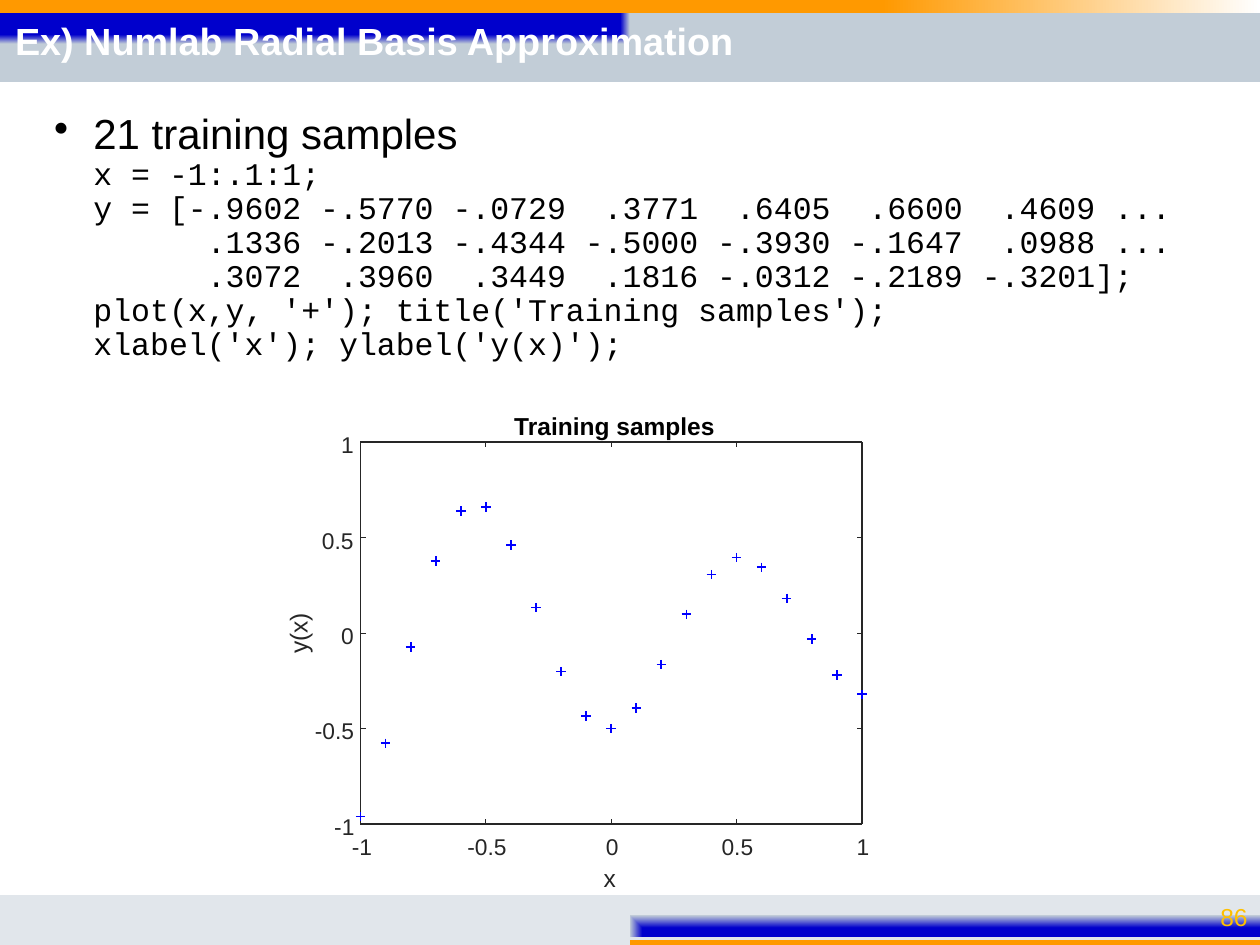
import pptx
import pptx.dml.color
import pptx.enum.shapes
import pptx.enum.text
import pptx.oxml
import pptx.oxml.ns
import pptx.util

Pt = pptx.util.Pt
qn = pptx.oxml.ns.qn
Align = pptx.enum.text.PP_ALIGN
Anchor = pptx.enum.text.MSO_ANCHOR
Fit = pptx.enum.text.MSO_AUTO_SIZE

theme = {
    "blue": "0000CC", "steel": "C2CDD7", "pale": "E1E6EB", "orange": "FF9900",
    "white": "FFFFFF", "black": "000000", "gold": "FFC000", "axis": "262626",
    "mark": "0000FF", "sans": "Arial", "mono": "Courier New",
    "title": 21.6, "body": 24, "code": 18, "label": 14, "tick": 13,
}


def write(para, text, size, color, font="sans", bold=False):
    run = para.add_run()
    run.text = text
    run.font.size = Pt(theme[size])
    run.font.name = theme[font]
    run.font.bold = bold
    run.font.color.rgb = pptx.dml.color.RGBColor.from_string(theme[color])


def draw(shapes, ends, width):
    line = shapes.add_connector(
        pptx.enum.shapes.MSO_CONNECTOR.STRAIGHT, *[Pt(v) for v in ends])
    line.line.color.rgb = pptx.dml.color.RGBColor.from_string(theme["axis"])
    line.line.width = Pt(width)
    line._element.spPr.append(pptx.oxml.parse_xml(
        f'<a:effectLst xmlns:a="{pptx.oxml.ns.nsuri("a")}"/>'))


deck = pptx.Presentation()
deck.slide_width, deck.slide_height = Pt(720), Pt(540)
slide = deck.slides.add_slide(deck.slide_layouts[5])
shapes = slide.shapes

first = '<a:path path="rect"><a:fillToRect r="100000" b="100000"/></a:path>'
last = '<a:path path="rect"><a:fillToRect l="100000" t="100000"/></a:path>'
flat = '<a:lin ang="0" scaled="1"/>'
bands = [
    (3.6, 43.2, [(25, "blue"), (75, "blue"), (100, "steel")], first),
    (0, 7.2, [(46, "orange"), (70, "orange"), (100, "white"), (100, "pale")], flat),
    (534.3, 5.7, [(50, "orange"), (93, "orange"), (100, "white"), (100, "pale")], last),
    (511.2, 23.8, [(40, "blue"), (100, "steel"), (100, "pale")], last),
]
for top, high, stops, way in bands:
    band = shapes.add_shape(pptx.enum.shapes.MSO_SHAPE.RECTANGLE,
                            0, Pt(top), Pt(720), Pt(high))
    band.shadow.inherit = False
    band.line.fill.background()
    band.fill.background()
    steps = "".join(f'<a:gs pos="{pos * 1000}"><a:srgbClr val="{theme[name]}"/></a:gs>'
                    for pos, name in stops)
    prop = band._element.spPr
    prop.replace(prop.find(qn("a:noFill")), pptx.oxml.parse_xml(
        f'<a:gradFill xmlns:a="{pptx.oxml.ns.nsuri("a")}" rotWithShape="1">'
        f'<a:gsLst>{steps}</a:gsLst>{way}</a:gradFill>'))

page = shapes.add_textbox(Pt(665.3), Pt(513.4), Pt(54.7), Pt(20.9))
page.text_frame.word_wrap = True
page.text_frame.vertical_anchor = Anchor.MIDDLE
para = page.text_frame.paragraphs[0]
para.alignment = Align.RIGHT
write(para, "86", "label", "gold")

body = shapes.add_textbox(Pt(23.8), Pt(61.2), Pt(671.8), Pt(167.8))
frame = body.text_frame
frame.word_wrap = True
para = frame.paragraphs[0]
para.line_spacing = 0.9
prop = para._p.get_or_add_pPr()
prop.set("marL", str(Pt(22.5)))
prop.set("indent", str(-Pt(22.5)))
prop.append(pptx.oxml.parse_xml(
    f'<a:buChar xmlns:a="{pptx.oxml.ns.nsuri("a")}" char="•"/>'))
write(para, "21 training samples", "body", "black")
code = [
    "x = -1:.1:1;",
    "y = [-.9602 -.5770 -.0729  .3771  .6405  .6600  .4609 ...",
    "      .1336 -.2013 -.4344 -.5000 -.3930 -.1647  .0988 ...",
    "      .3072  .3960  .3449  .1816 -.0312 -.2189 -.3201];",
    "plot(x,y, '+'); title('Training samples');",
    "xlabel('x'); ylabel('y(x)');",
]
for text in code:
    para = frame.add_paragraph()
    para.level = 1
    para.line_spacing = 0.9
    prop = para._p.get_or_add_pPr()
    prop.set("marL", str(Pt(22.5)))
    prop.set("indent", "0")
    write(para, text, "code", "black", "mono")

title = shapes.title
title.left, title.top, title.width, title.height = Pt(1.4), Pt(7.9), Pt(718.6), Pt(33.1)
frame = title.text_frame
frame.auto_size = Fit.NONE
frame.vertical_anchor = Anchor.MIDDLE
para = frame.paragraphs[0]
para.alignment = Align.LEFT
para.line_spacing = 0.9
write(para, "Ex) Numlab Radial Basis Approximation", "title", "white", bold=True)
shapes._spTree.append(title._element)

plot = shapes.add_group_shape().shapes
left, right, top, base = 206, 492.5, 252.7, 470.9
midx, midy = (left + right) / 2, (top + base) / 2
halfx, halfy = (right - left) / 2, (base - top) / 2
tick = 2.9

for y in (base, top):
    draw(plot, (left, y, right, y), 1)
for x in (left, right):
    draw(plot, (x, base, x, top), 1)

labels = [
    (midx - 4.3, 493.2, 7.2, 17.3, "x", "label", "axis", False, 0),
    (158.8, 353.2, 23.4, 17.3, "y(x)", "label", "axis", False, 270),
    (293.8, 234.7, 121, 19.4, "Training samples", "label", "black", True, 0),
]
scale = [(-1, "-1", 18, 11), (-0.5, "-0.5", 28, 22), (0, "0", 13, 7),
         (0.5, "0.5", 24.5, 18), (1, "1", 13, 7)]
for value, text, wide, ink in scale:
    x, y = midx + value * halfx, midy - value * halfy
    for ends in ((x, base, x, base - tick), (x, top, x, top + tick),
                 (left, y, left + tick, y), (right, y, right - tick, y)):
        draw(plot, ends, 0.5)
    for spot in ((x - ink / 2 + 0.5, 476), (202 - ink, y - 6.5)):
        labels.append((*spot, wide, 18.7, text, "tick", "axis", False, 0))

for x, y, wide, high, text, size, color, bold, turn in labels:
    box = plot.add_textbox(Pt(x), Pt(y), Pt(wide), Pt(high))
    box.rotation = turn
    frame = box.text_frame
    frame.margin_left = frame.margin_right = frame.margin_top = frame.margin_bottom = 0
    frame.word_wrap = False
    frame.auto_size = Fit.SHAPE_TO_FIT_TEXT
    write(frame.paragraphs[0], text, size, color, bold=bold)

data = [-.9602, -.5770, -.0729, .3771, .6405, .6600, .4609,
        .1336, -.2013, -.4344, -.5000, -.3930, -.1647, .0988,
        .3072, .3960, .3449, .1816, -.0312, -.2189, -.3201]
arm = Pt(2.7)
for num, value in enumerate(data):
    x = Pt(left + num * (right - left) / (len(data) - 1))
    y = Pt(midy - value * halfy)
    pen = plot.build_freeform(x, y - arm)
    pen.add_line_segments([(x, y + arm)], close=False)
    pen.move_to(x - arm, y)
    pen.add_line_segments([(x + arm, y)], close=False)
    plus = pen.convert_to_shape()
    plus.shadow.inherit = False
    plus.fill.background()
    plus.line.color.rgb = pptx.dml.color.RGBColor.from_string(theme["mark"])
    plus.line.width = Pt(1)

deck.save("out.pptx")
